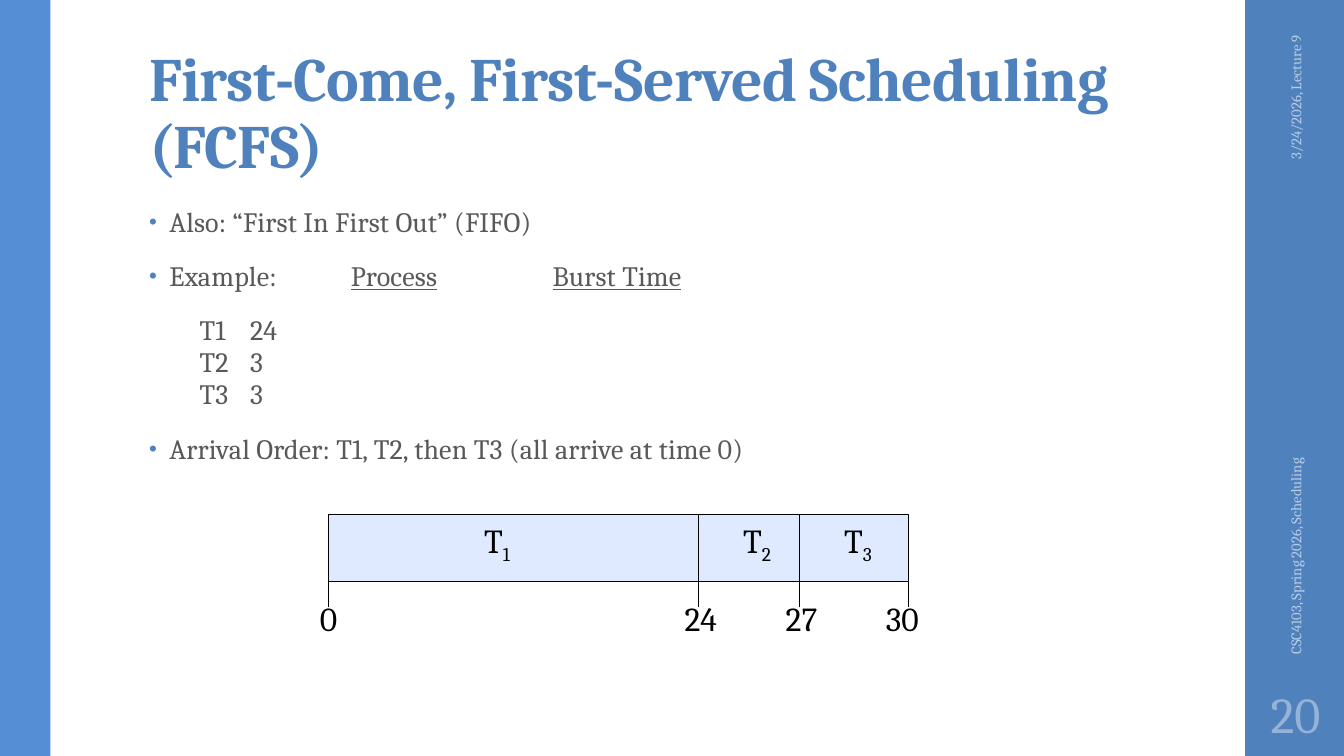
from lxml.etree import SubElement
from pptx import Presentation
from pptx.dml.color import RGBColor
from pptx.enum.shapes import MSO_CONNECTOR, MSO_SHAPE
from pptx.enum.text import MSO_ANCHOR, MSO_AUTO_SIZE, PP_ALIGN
from pptx.oxml.ns import qn
from pptx.util import Pt

PX = 9144  # EMU per px, 100 px to the inch
FONT = "Cambria"
BLUE = RGBColor(0x4F, 0x81, 0xBD)
LIGHT_BLUE = RGBColor(0x55, 0x8E, 0xD5)
FOOTER_BLUE = RGBColor(0xB9, 0xCD, 0xE5)
NUMBER_BLUE = RGBColor(0x95, 0xB3, 0xD7)
BAR_FILL = RGBColor(0xDF, 0xE9, 0xFF)
GREY = RGBColor(0x59, 0x59, 0x59)
BLACK = RGBColor(0, 0, 0)


def px(*lengths):
    return [length * PX for length in lengths]


def set_all(target, values):
    for name, value in values.items():
        setattr(target, name, value)


def add_run(paragraph, text, size, color, spacing=0, baseline=0, **font_format):
    run = paragraph.add_run()
    run.text = text
    set_all(run.font, {"name": FONT, "size": Pt(size), **font_format})
    run.font.color.rgb = color
    for name, value in (("spc", spacing), ("baseline", baseline)):
        if value:
            run.font._element.set(name, str(value))


def place(placeholder, box, **frame_format):
    for name, length in zip(("left", "top", "width", "height"), px(*box)):
        setattr(placeholder, name, length)
    frame = placeholder.text_frame
    set_all(frame, {"auto_size": MSO_AUTO_SIZE.NONE, "word_wrap": True, **frame_format})
    return frame


def add_label(shapes, box, align, wrap=True, rotation=0, margin=10):
    label = shapes.add_textbox(*px(*box))
    label.rotation = rotation
    set_all(label.text_frame, {
        "word_wrap": wrap, "vertical_anchor": MSO_ANCHOR.MIDDLE,
        "margin_left": margin * PX, "margin_right": margin * PX})
    paragraph = label.text_frame.paragraphs[0]
    paragraph.alignment = align
    return paragraph


def add_rect(shapes, box, fill, outline=None):
    rect = shapes.add_shape(MSO_SHAPE.RECTANGLE, *px(*box))
    rect.shadow.inherit = False
    rect.fill.solid()
    rect.fill.fore_color.rgb = fill
    if outline is None:
        rect.line.fill.background()
    else:
        rect.line.color.rgb = outline
        rect.line.width = Pt(0.75)


def add_vertical(shapes, x, top, bottom):
    line = shapes.add_connector(MSO_CONNECTOR.STRAIGHT, *px(x, top, x, bottom))
    line.line.color.rgb = BLACK
    line.line.width = Pt(0.75)
    SubElement(line._element.spPr, qn("a:effectLst"))


def set_bullet(paragraph, bulleted):
    p_pr = paragraph._p.get_or_add_pPr()
    indent = 20 * PX if bulleted else 0
    p_pr.set("marL", str(indent))
    p_pr.set("indent", str(-indent))
    if not bulleted:
        SubElement(p_pr, qn("a:buNone"))
        return
    color = SubElement(p_pr, qn("a:buClr"))
    SubElement(color, qn("a:srgbClr"), val=str(BLUE))
    SubElement(p_pr, qn("a:buSzPct"), val="80000")
    SubElement(p_pr, qn("a:buFont"), typeface="Arial")
    SubElement(p_pr, qn("a:buChar"), char="•")


def set_tabs(paragraph, stops):
    tabs = SubElement(paragraph._p.get_or_add_pPr(), qn("a:tabLst"))
    for stop in stops:
        SubElement(tabs, qn("a:tab"), pos=str(stop * PX), algn="l")


def draw_title(title, box):
    frame = place(title, box, vertical_anchor=MSO_ANCHOR.BOTTOM,
                  margin_top=3 * PX, margin_bottom=5 * PX)
    heading = frame.paragraphs[0]
    set_all(heading, {"alignment": PP_ALIGN.LEFT, "line_spacing": 0.9})
    add_run(heading, "First-Come, First-Served Scheduling (FCFS)", 44, BLUE,
            spacing=-50, bold=True)


def draw_body(body, box):
    frame = place(body, box, vertical_anchor=MSO_ANCHOR.TOP)
    # text parts, bulleted, tab stops, space before, space after
    items = [
        (["Also: “First In First Out” (FIFO)"], True, (), 0, 2),
        (["Example:\t", "Process", "\t", "Burst Time"], True, (200, 400), 14, 2),
        (["\tT1\t24"], False, (225, 425), 14, 0),
        (["\tT2\t3"], False, (225, 431), 0, 0),
        (["\tT3\t3"], False, (206, 431), 0, 2),
        (["Arrival Order: T1, T2, then T3 (all arrive at time 0)"], True, (), 14, 2),
    ]
    for index, (parts, bulleted, stops, before, after) in enumerate(items):
        item = frame.add_paragraph() if index else frame.paragraphs[0]
        set_all(item, {"line_spacing": 0.95, "space_before": Pt(before),
                       "space_after": Pt(after), "alignment": PP_ALIGN.LEFT})
        set_bullet(item, bulleted)
        if stops:
            set_tabs(item, stops)
        for part in parts:
            add_run(item, part, 20, GREY, spacing=10,
                    underline=part in ("Process", "Burst Time"))


def draw_side_bar(shapes, box):
    left, top, width, height = box
    add_rect(shapes, box, BLUE)
    center = left + width // 2
    # rotated date and course: text, middle, length, alignment
    for text, middle, length, align in (
            ("3/24/2026, Lecture 9", top + 129, 208, PP_ALIGN.RIGHT),
            ("CSC4103, Spring 2026, Scheduling", top + 463, 392, PP_ALIGN.LEFT)):
        note = add_label(shapes, (center - length // 2, middle - 20, length, 40),
                         align, rotation=270)
        add_run(note, text, 10.5, FOOTER_BLUE)
    number = add_label(shapes, (left, top + height - 75, width, 65),
                       PP_ALIGN.CENTER, margin=5)
    add_run(number, "20", 36, NUMBER_BLUE)


def draw_gantt(shapes, box):
    left, top, width, height = box
    bottom = top + height
    chart = shapes.add_group_shape().shapes
    add_rect(chart, box, BAR_FILL, BLACK)
    # task number and label centre
    for task, center in (("1", 167), ("2", 425), ("3", 525)):
        name = add_label(chart, (left + center - 25, top + 3, 50, 51),
                         PP_ALIGN.CENTER, wrap=False)
        add_run(name, "T", 24, BLACK)
        add_run(name, task, 24, BLACK, baseline=-25000)
    # time, tick position and label centre
    for time, tick, center in (("0", 0, 0), ("24", 367, 369),
                               ("27", 467, 469), ("30", width, width - 6)):
        if 0 < tick < width:
            add_vertical(chart, left + tick, top, bottom)
        add_vertical(chart, left + tick, bottom, bottom + 25)
        mark = add_label(chart, (left + center - 27, bottom + 11, 54, 51),
                         PP_ALIGN.CENTER, wrap=False)
        add_run(mark, time, 24, BLACK)


def main():
    deck = Presentation()
    deck.slide_width, deck.slide_height = px(1333, 750)
    slide = deck.slides.add_slide(deck.slide_layouts[1])
    add_rect(slide.shapes, (0, 0, 50, 750), LIGHT_BLUE)
    draw_side_bar(slide.shapes, (1235, 0, 100, 750))
    draw_title(slide.shapes.title, (138, 32, 1060, 153))
    draw_body(slide.placeholders[1], (138, 200, 940, 476))
    draw_gantt(slide.shapes, (326, 510, 575, 67))
    deck.save("out.pptx")


if __name__ == "__main__":
    main()
